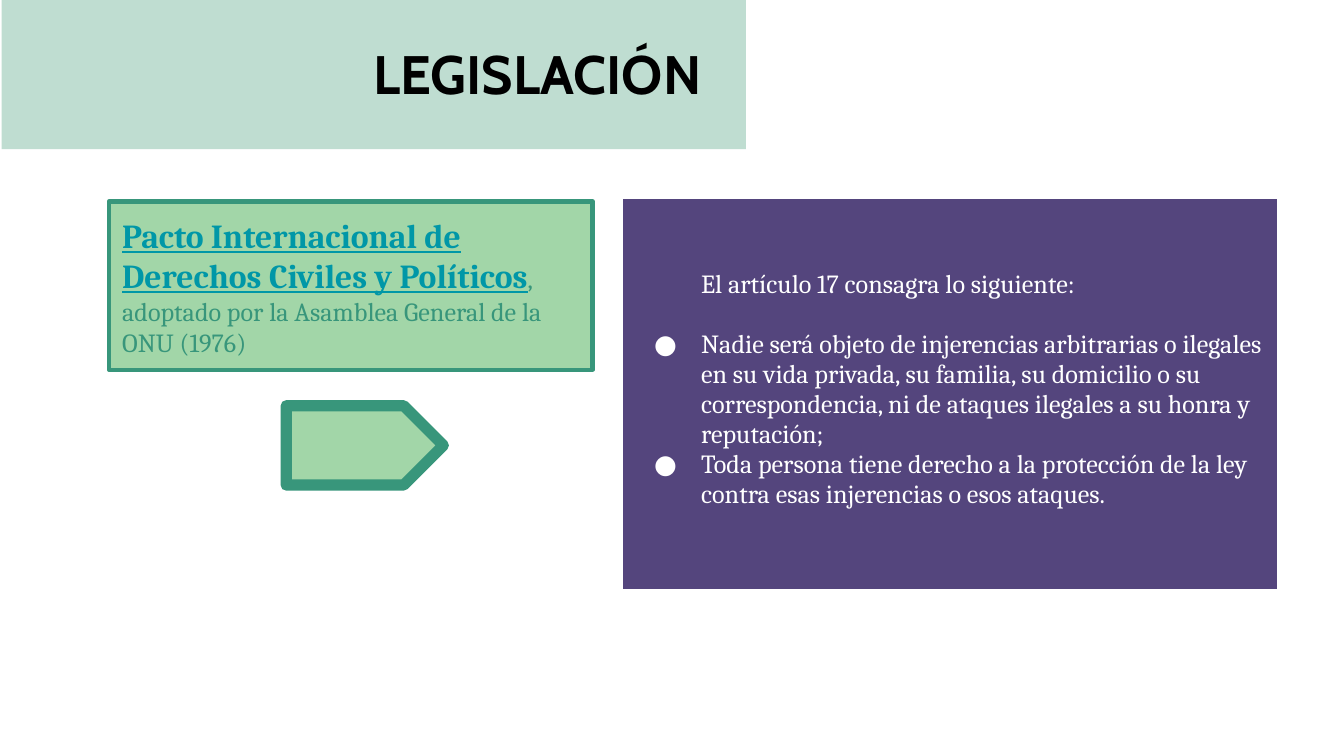
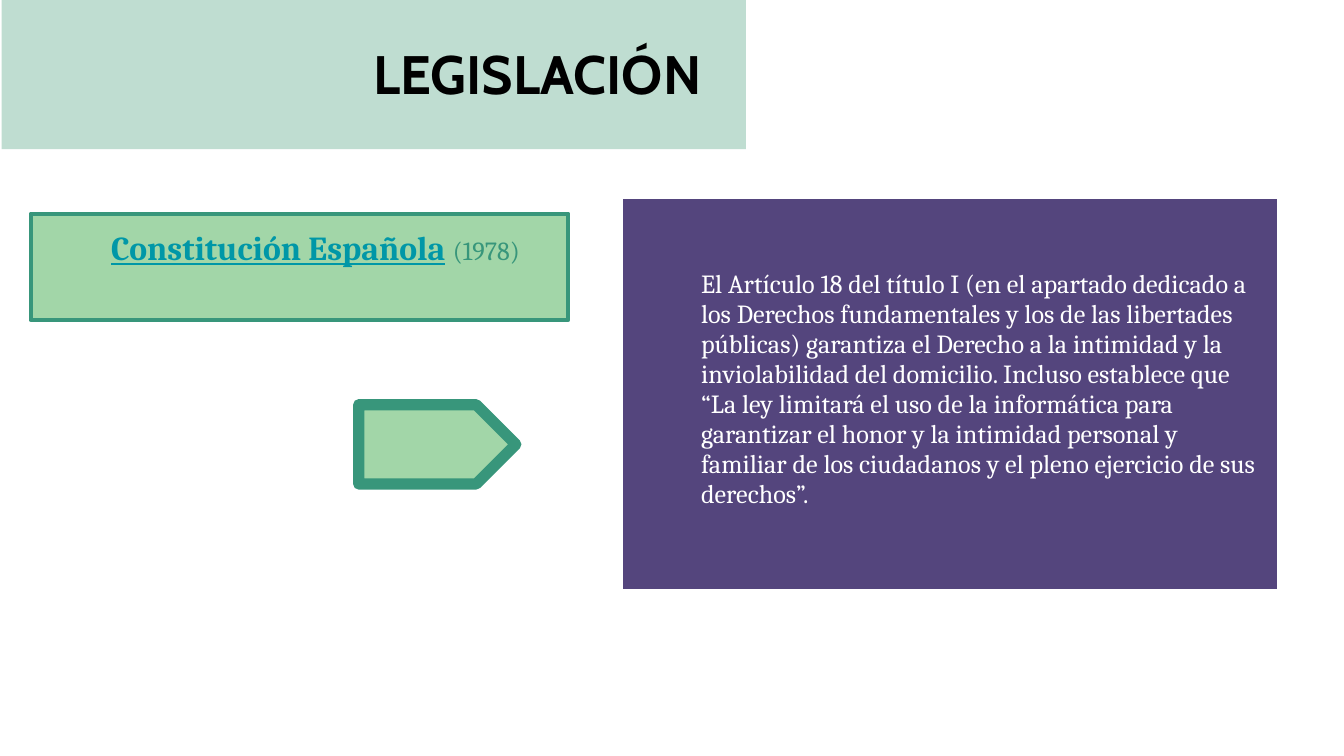
from dataclasses import dataclass

import lxml.etree
import pptx
import pptx.dml.color
import pptx.enum.shapes
import pptx.enum.text
import pptx.oxml.ns
import pptx.util

Cm = pptx.util.Cm
Pt = pptx.util.Pt
SHAPES = pptx.enum.shapes.MSO_SHAPE
qn = pptx.oxml.ns.qn

COLORS = {
    "band": "BFDDD1",
    "title": "000000",
    "panel": "54457D",
    "white": "FFFFFF",
    "green": "A2D6A8",
    "dark_green": "38967B",
    "law": "0097A7",
}
TITLE_FONT = "Cabin"
BODY_FONT = "Cambria"
MARGIN = Cm(0.25)
TEXT_INDENT = Cm(1.27)
BULLET_HANG = Cm(0.89)


@dataclass(frozen=True)
class Box:
    left: float
    top: float
    width: float
    height: float

    def lengths(self) -> tuple:
        return Cm(self.left), Cm(self.top), Cm(self.width), Cm(self.height)


@dataclass(frozen=True)
class Span:
    text: str
    size: int = 14
    bold: bool = False
    color: str = "dark_green"
    underline: bool = False


@dataclass(frozen=True)
class Provision:
    text: str
    bullet: bool = False
    space_after: int = 0


@dataclass(frozen=True)
class LawSlide:
    law_box: Box
    law_spans: tuple[Span, ...]
    law_indent: int
    arrow_box: Box
    provisions: tuple[Provision, ...]


BAND_BOX = Box(0.03, 0, 14.07, 2.82)
TITLE_BOX = Box(3.78, 0.51, 9.73, 1.78)
PANEL_BOX = Box(11.73, 3.71, 12.45, 7.47)

LAW_SLIDES = (
    LawSlide(
        law_box=Box(2.06, 3.81, 9.14, 3.18),
        law_spans=(
            Span("Pacto Internacional de Derechos Civiles y Políticos", 18, True, "law", True),
            Span(", adoptado por la Asamblea General de la ONU (1976)"),
        ),
        law_indent=0,
        arrow_box=Box(5.41, 7.67, 2.97, 1.5),
        provisions=(
            Provision("El artículo 17 consagra lo siguiente:", space_after=16),
            Provision(
                "Nadie será objeto de injerencias arbitrarias o ilegales en su vida privada, "
                "su familia, su domicilio o su correspondencia, ni de ataques ilegales a su "
                "honra y reputación;",
                bullet=True,
            ),
            Provision(
                "Toda persona tiene derecho a la protección de la ley contra esas "
                "injerencias o esos ataques.",
                bullet=True,
            ),
        ),
    ),
    LawSlide(
        law_box=Box(0.58, 4.04, 10.16, 2.01),
        law_spans=(
            Span("Constitución Española", 18, True, "law", True),
            Span(" ", 18, True),
            Span("(1978)"),
        ),
        law_indent=TEXT_INDENT,
        arrow_box=Box(6.78, 7.65, 2.97, 1.5),
        provisions=(
            Provision(
                "El Artículo 18 del título I (en el apartado dedicado a los Derechos "
                "fundamentales y los de las libertades públicas) garantiza el Derecho a la "
                "intimidad y la inviolabilidad del domicilio. Incluso establece que “La ley "
                "limitará el uso de la informática para garantizar el honor y la intimidad "
                "personal y familiar de los ciudadanos y el pleno ejercicio de sus derechos”."
            ),
        ),
    ),
)


def rgb(name: str) -> pptx.dml.color.RGBColor:
    return pptx.dml.color.RGBColor.from_string(COLORS[name])


def style_font(font, name: str, size: int, color: str, bold: bool = False) -> None:
    font.name = name
    font.size = Pt(size)
    font.bold = bold
    font.color.rgb = rgb(color)


def set_margins(holder) -> None:
    """Give a text frame or a table cell the shared inner margins."""
    holder.margin_left = holder.margin_right = MARGIN
    holder.margin_top = holder.margin_bottom = MARGIN


def set_indent(paragraph, left: int, first_line: int = 0):
    properties = paragraph._p.get_or_add_pPr()
    properties.set("marL", str(int(left)))
    properties.set("indent", str(int(first_line)))
    return properties


def add_color(parent, color: str) -> None:
    lxml.etree.SubElement(parent, qn("a:srgbClr"), val=COLORS[color])


def add_filled_shape(slide, kind, box: Box, fill: str, line_width: float = 0):
    shape = slide.shapes.add_shape(kind, *box.lengths())
    shape.shadow.inherit = False
    shape.fill.solid()
    shape.fill.fore_color.rgb = rgb(fill)
    if line_width:
        shape.line.color.rgb = rgb("dark_green")
        shape.line.width = Pt(line_width)
    else:
        shape.line.fill.background()
    return shape


def add_title_band(slide) -> None:
    add_filled_shape(slide, SHAPES.RECTANGLE, BAND_BOX, "band")
    frame = slide.shapes.add_textbox(*TITLE_BOX.lengths()).text_frame
    frame.word_wrap = True
    set_margins(frame)
    paragraph = frame.paragraphs[0]
    paragraph.text = "LEGISLACIÓN"
    paragraph.alignment = pptx.enum.text.PP_ALIGN.RIGHT
    style_font(paragraph.font, TITLE_FONT, 29, "title", bold=True)


def add_cell_borders(cell, color: str, width: float) -> None:
    properties = cell._tc.get_or_add_tcPr()
    for position, side in enumerate(("a:lnL", "a:lnR", "a:lnT", "a:lnB")):
        line = lxml.etree.Element(qn(side), w=str(int(Pt(width))))
        add_color(lxml.etree.SubElement(line, qn("a:solidFill")), color)
        properties.insert(position, line)


def add_provision_panel(slide, provisions: tuple[Provision, ...]) -> None:
    table = slide.shapes.add_table(1, 1, *PANEL_BOX.lengths()).table
    table.first_row = table.horz_banding = False
    cell = table.cell(0, 0)
    cell.fill.solid()
    cell.fill.fore_color.rgb = rgb("panel")
    add_cell_borders(cell, "white", 3)
    set_margins(cell)
    cell.margin_top = Cm(1.39)
    frame = cell.text_frame
    for index, provision in enumerate(provisions):
        paragraph = frame.add_paragraph() if index else frame.paragraphs[0]
        paragraph.text = provision.text
        paragraph.space_after = Pt(provision.space_after)
        properties = set_indent(paragraph, TEXT_INDENT, -BULLET_HANG if provision.bullet else 0)
        if provision.bullet:
            add_color(lxml.etree.SubElement(properties, qn("a:buClr")), "white")
            lxml.etree.SubElement(properties, qn("a:buFont"), typeface=BODY_FONT)
            lxml.etree.SubElement(properties, qn("a:buChar"), char="●")
        style_font(paragraph.font, BODY_FONT, 14, "white")


def add_law_box(slide, law: LawSlide) -> None:
    shape = add_filled_shape(slide, SHAPES.RECTANGLE, law.law_box, "green", 2.25)
    frame = shape.text_frame
    frame.word_wrap = True
    frame.vertical_anchor = pptx.enum.text.MSO_ANCHOR.TOP
    set_margins(frame)
    paragraph = frame.paragraphs[0]
    paragraph.alignment = pptx.enum.text.PP_ALIGN.LEFT
    set_indent(paragraph, law.law_indent)
    for span in law.law_spans:
        run = paragraph.add_run()
        run.text = span.text
        style_font(run.font, BODY_FONT, span.size, span.color, span.bold)
        run.font.underline = span.underline


def add_law_slide(presentation, law: LawSlide) -> None:
    slide = presentation.slides.add_slide(presentation.slide_layouts[6])
    add_title_band(slide)
    add_provision_panel(slide, law.provisions)
    add_filled_shape(slide, SHAPES.PENTAGON, law.arrow_box, "green", 6)
    add_law_box(slide, law)


def main() -> None:
    presentation = pptx.Presentation()
    presentation.slide_width = Cm(25.4)
    presentation.slide_height = Cm(14.29)
    for law in LAW_SLIDES:
        add_law_slide(presentation, law)
    presentation.save("out.pptx")


if __name__ == "__main__":
    main()
